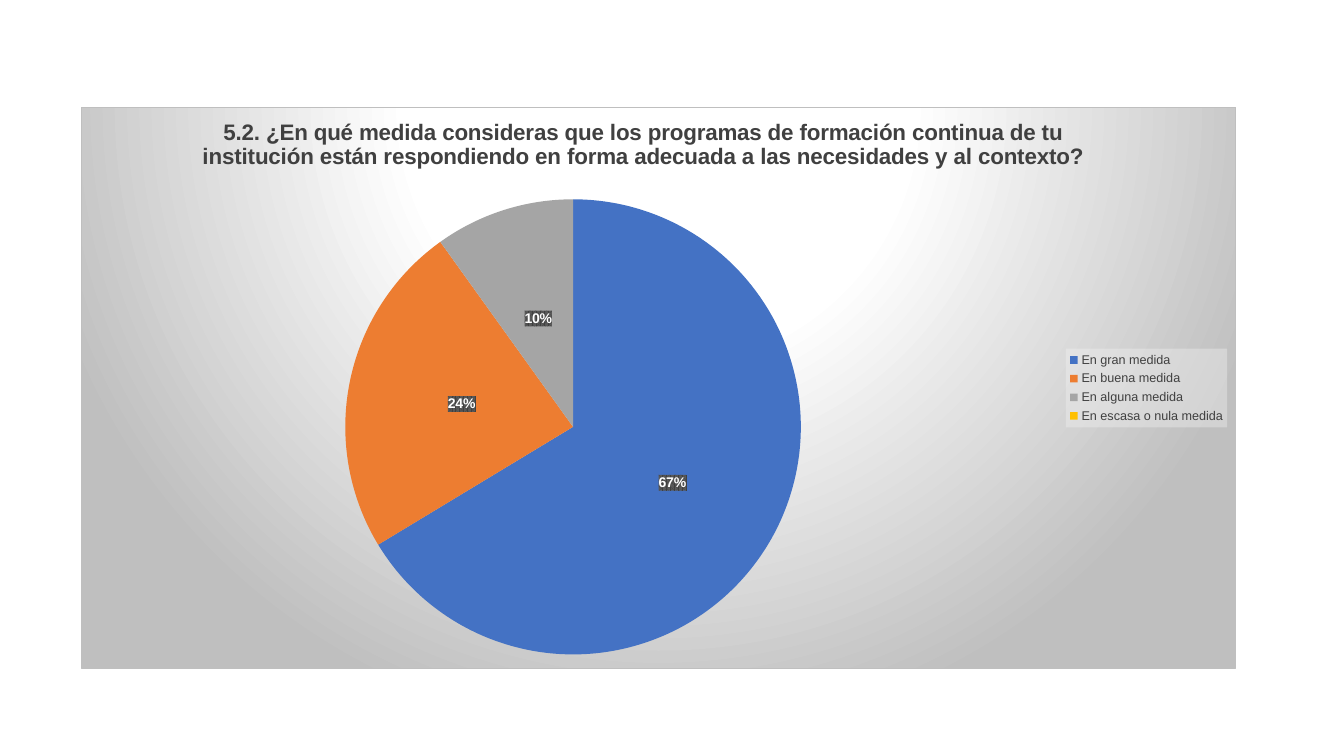
import pptx
import pptx.chart.data
import pptx.dml.color
import pptx.enum.chart
import pptx.oxml
import pptx.util

PX = 914400 / 100.8
THEME = {
    "font": "Arial",
    "text": "404040",
    "label": "FFFFFF",
    "label_back": "595959",
    "panel": "FFFFFF",
    "edge": "BFBFBF",
    "legend_back": "F2F2F2",
    "title_pt": 16,
    "label_pt": 10,
    "legend_pt": 9,
}
NS = (
    'xmlns:c="http://schemas.openxmlformats.org/drawingml/2006/chart" '
    'xmlns:a="http://schemas.openxmlformats.org/drawingml/2006/main"'
)
CHART_X, CHART_Y, CHART_W, CHART_H = 81, 107, 1155, 562
ANSWERS = [
    ("En gran medida", 67, "4472C4"),
    ("En buena medida", 24, "ED7D31"),
    ("En alguna medida", 10, "A5A5A5"),
    ("En escasa o nula medida", 0, "FFC000"),
]


def style_font(font, size, color, bold=False):
    font.name = THEME["font"]
    font.size = pptx.util.Pt(size)
    font.bold = bold
    font.color.rgb = pptx.dml.color.RGBColor.from_string(color)


def place(element, index, x, y, size=None):
    """Put a manual layout, in px within the chart, at a child index."""
    for old in element.findall(pptx.oxml.ns.qn("c:layout")):
        element.remove(old)
    values = [("x", x / CHART_W), ("y", y / CHART_H)]
    target = ""
    if size:
        target = '<c:layoutTarget val="inner"/>'
        values += [("w", size / CHART_W), ("h", size / CHART_H)]
    modes = "".join(f'<c:{k}Mode val="edge"/>' for k in "xy")
    numbers = "".join(f'<c:{k} val="{v:.4f}"/>' for k, v in values)
    element.insert(index, pptx.oxml.parse_xml(
        f"<c:layout {NS}><c:manualLayout>{target}{modes}{numbers}"
        "</c:manualLayout></c:layout>"))


prs = pptx.Presentation()
prs.slide_width = round(1344 * PX)
prs.slide_height = round(756 * PX)
s = prs.slides.add_slide(prs.slide_layouts[6])

data = pptx.chart.data.CategoryChartData()
data.categories = [name for name, _, _ in ANSWERS]
data.add_series("Series 1", [value for _, value, _ in ANSWERS])
chart = s.shapes.add_chart(
    pptx.enum.chart.XL_CHART_TYPE.PIE,
    *(round(n * PX) for n in (CHART_X, CHART_Y, CHART_W, CHART_H)), data).chart
style_font(chart.font, THEME["label_pt"], "000000")

# Panel behind the pie
chart.element.find(pptx.oxml.ns.qn("c:chart")).addnext(pptx.oxml.parse_xml(f"""
<c:spPr {NS}>
  <a:gradFill><a:gsLst>
    <a:gs pos="0"><a:srgbClr val="{THEME['panel']}"/></a:gs>
    <a:gs pos="39000"><a:srgbClr val="{THEME['panel']}"/></a:gs>
    <a:gs pos="100000"><a:srgbClr val="{THEME['edge']}"/></a:gs>
  </a:gsLst><a:path path="circle">
    <a:fillToRect l="50000" t="-80000" r="50000" b="180000"/>
  </a:path></a:gradFill>
  <a:ln w="9525"><a:solidFill><a:srgbClr val="{THEME['edge']}"/></a:solidFill></a:ln>
</c:spPr>"""))

# Title
chart.has_title = True
p = chart.chart_title.text_frame.paragraphs[0]
p.text = ("5.2. ¿En qué medida consideras que los programas de formación continua "
          "de tu institución están respondiendo en forma adecuada a las "
          "necesidades y al contexto?")
style_font(p.font, THEME["title_pt"], THEME["text"], True)
place(chart.chart_title._element, 1, 117, 6)

# Slices
plot = chart.plots[0]
plot.vary_by_categories = True
series = plot.series[0]
for i, (_, _, color) in enumerate(ANSWERS):
    fmt = series.points[i].format
    fmt.fill.solid()
    fmt.fill.fore_color.rgb = pptx.dml.color.RGBColor.from_string(color)
    fmt.line.fill.background()
place(plot._element.getparent(), 0, 264, 92, 456)

# Percentage labels; the empty answer has none
labels = series.data_labels
labels.show_value = True
labels.number_format = '0"%"'
labels.number_format_is_linked = False
labels.position = pptx.enum.chart.XL_LABEL_POSITION.CENTER
style_font(labels.font, THEME["label_pt"], THEME["label"], True)
labels._element.find(pptx.oxml.ns.qn("c:txPr")).addprevious(pptx.oxml.parse_xml(f"""
<c:spPr {NS}><a:pattFill prst="pct75">
  <a:fgClr><a:srgbClr val="{THEME['text']}"/></a:fgClr>
  <a:bgClr><a:srgbClr val="{THEME['label_back']}"/></a:bgClr>
</a:pattFill><a:ln><a:noFill/></a:ln></c:spPr>"""))
labels._element.insert(0, pptx.oxml.parse_xml(
    f'<c:dLbl {NS}><c:idx val="{len(ANSWERS) - 1}"/><c:delete val="1"/></c:dLbl>'))

# Legend
chart.has_legend = True
legend = chart.legend
legend.position = pptx.enum.chart.XL_LEGEND_POSITION.RIGHT
legend.include_in_layout = False
style_font(legend.font, THEME["legend_pt"], THEME["text"])
legend._element.find(pptx.oxml.ns.qn("c:txPr")).addprevious(pptx.oxml.parse_xml(f"""
<c:spPr {NS}><a:solidFill><a:srgbClr val="{THEME['legend_back']}">
  <a:alpha val="39000"/>
</a:srgbClr></a:solidFill><a:ln><a:noFill/></a:ln></c:spPr>"""))

prs.save("out.pptx")
